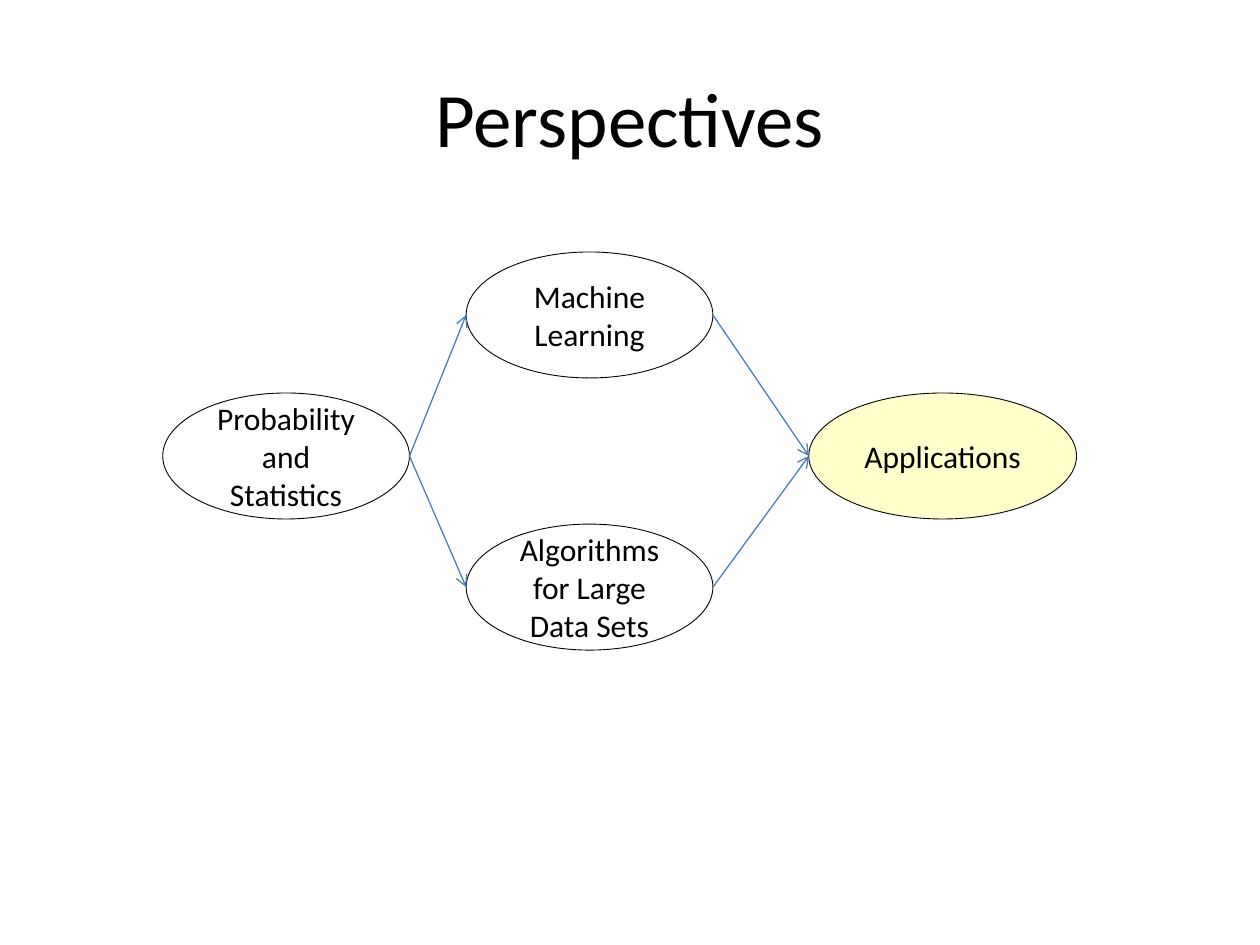
from lxml import etree
from pptx import Presentation
from pptx import util as u
from pptx.dml.color import RGBColor
from pptx.enum import shapes, text
from pptx.oxml import ns

BLACK = RGBColor(0x00, 0x00, 0x00)
YELLOW = RGBColor(0xFF, 0xFF, 0xCC)
BLUE = RGBColor(0x4B, 0x7E, 0xBC)

NODE_H = 72


def write(sp, words, size):
    """Put centred Calibri text in a shape."""
    tf = sp.text_frame
    tf.word_wrap = True
    tf.vertical_anchor = text.MSO_ANCHOR.MIDDLE
    p = tf.paragraphs[0]
    p.alignment = text.PP_ALIGN.CENTER
    r = p.add_run()
    r.text = words
    for name, value in {"name": "Calibri", "size": u.Pt(size)}.items():
        setattr(r.font, name, value)
    r.font.color.rgb = BLACK


def add_title(s, words):
    sp = s.shapes.title
    box = {"left": 36, "top": 21.6, "width": 648, "height": 90}
    for name, value in box.items():
        setattr(sp, name, u.Pt(value))
    write(sp, words, 44)


def add_node(s, words, left, top, width=141, fill=None):
    sp = s.shapes.add_shape(shapes.MSO_SHAPE.OVAL, u.Pt(left), u.Pt(top),
                            u.Pt(width), u.Pt(NODE_H))
    sp.shadow.inherit = False
    if fill is None:
        sp.fill.background()
    else:
        sp.fill.solid()
        sp.fill.fore_color.rgb = fill
    sp.line.color.rgb = BLACK
    sp.line.width = u.Pt(0.5)
    write(sp, words, 18)
    return sp


def add_arrow(s, start, end):
    """Draw an arrow from the right tip of one oval to the left tip of another."""
    c = s.shapes.add_connector(
        shapes.MSO_CONNECTOR.STRAIGHT,
        start.left + start.width, start.top + start.height // 2,
        end.left, end.top + end.height // 2)
    c.line.color.rgb = BLUE
    c.line.width = u.Pt(0.75)
    etree.SubElement(c.line._get_or_add_ln(), ns.qn("a:tailEnd"), type="arrow")
    etree.SubElement(c._element.spPr, ns.qn("a:effectLst"))


def main():
    prs = Presentation()
    prs.slide_width, prs.slide_height = u.Pt(720), u.Pt(540)
    s = prs.slides.add_slide(prs.slide_layouts[5])
    add_title(s, "Perspectives")

    # Topics, from left to right
    basis = add_node(s, "Probability and Statistics", 93, 224.6)
    middle = [add_node(s, "Machine Learning", 266.4, 144),
              add_node(s, "Algorithms for Large Data Sets", 266.4, 299.5)]
    goal = add_node(s, "Applications", 462.2, 224.6, 153, YELLOW)

    # Arrows from the basis through both fields to the applications
    for field in middle:
        add_arrow(s, basis, field)
    for field in middle:
        add_arrow(s, field, goal)

    prs.save("out.pptx")


if __name__ == "__main__":
    main()
